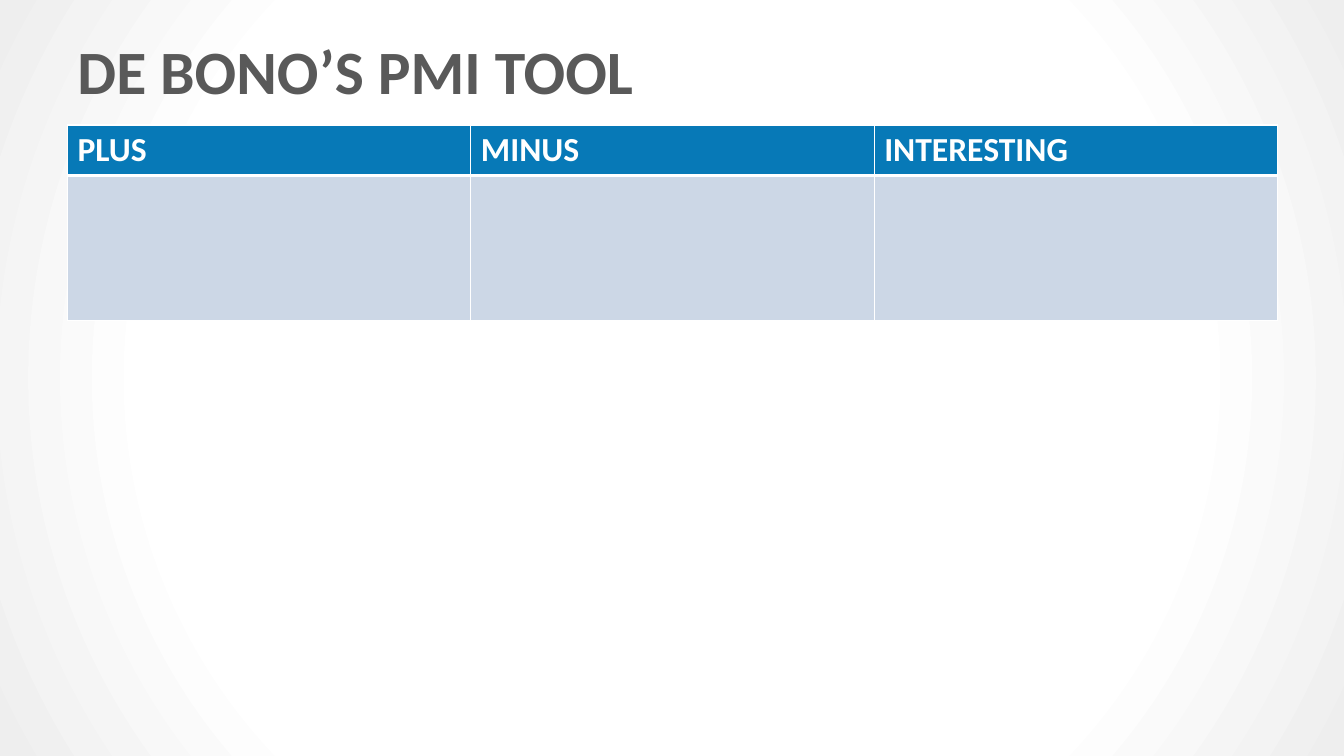
from lxml import etree
from pptx import Presentation
from pptx.dml.color import RGBColor
from pptx.enum import text
from pptx.oxml import ns
from pptx.util import Inches, Pt

WHITE = RGBColor(0xFF, 0xFF, 0xFF)
EDGE = RGBColor(0xEE, 0xEE, 0xEE)
GREY = RGBColor(0x59, 0x59, 0x59)
BLUE = RGBColor(0x07, 0x79, 0xB7)
PALE = RGBColor(0xCC, 0xD7, 0xE6)

HEADS = ["PLUS", "MINUS", "INTERESTING"]
ROWS = [0.49, 1.44]


def write(frame, words, size, color, bold=True, font="Calibri"):
    run = frame.paragraphs[0].add_run()
    run.text = words
    run.font.name = font
    run.font.size = Pt(size)
    run.font.bold = bold
    run.font.color.rgb = color


def backdrop(slide):
    # Radial glow: white centre, light grey corners
    fill = slide.background.fill
    fill.gradient()
    for stop, (place, color) in zip(fill.gradient_stops, [(0.67, WHITE), (1, EDGE)]):
        stop.position = place
        stop.color.rgb = color
    grad = slide.element.find(".//" + ns.qn("a:gradFill"))
    grad.remove(grad.find(ns.qn("a:lin")))
    ring = etree.SubElement(grad, ns.qn("a:path"), path="circle")
    etree.SubElement(ring, ns.qn("a:fillToRect"), l="50000", t="50000", r="50000", b="50000")


def title(slide, left, top, width, height):
    box = slide.shapes.add_textbox(Inches(left), Inches(top), Inches(width), Inches(height))
    frame = box.text_frame
    frame.word_wrap = True
    frame.vertical_anchor = text.MSO_ANCHOR.MIDDLE
    write(frame, "DE BONO’S PMI TOOL", 44, GREY)


def border(cell, **widths):
    # Border lines come before the fill in the cell properties
    props = cell._tc.get_or_add_tcPr()
    for spot, (side, width) in enumerate(widths.items()):
        line = etree.Element(ns.qn("a:ln" + side), w=str(Pt(width)))
        solid = etree.SubElement(line, ns.qn("a:solidFill"))
        etree.SubElement(solid, ns.qn("a:srgbClr"), val=str(WHITE))
        props.insert(spot, line)


def grid(slide, left, top, width):
    frame = slide.shapes.add_table(len(ROWS), len(HEADS), Inches(left), Inches(top),
                                   Inches(width), Inches(sum(ROWS)))
    table = frame.table
    for row, height in zip(table.rows, ROWS):
        row.height = Inches(height)
    for col, head in enumerate(HEADS):
        table.columns[col].width = Inches(width / len(HEADS))
        write(table.cell(0, col).text_frame, head, 24, WHITE)
        for row, color in enumerate([BLUE, PALE]):
            cell = table.cell(row, col)
            cell.fill.solid()
            cell.fill.fore_color.rgb = color
            # A thick rule parts the header from the body
            border(cell, L=1, R=1, T=3 if row else 1, B=1 if row else 3)


def main():
    deck = Presentation()
    deck.slide_width, deck.slide_height = Inches(13.33), Inches(7.5)
    slide = deck.slides.add_slide(deck.slide_layouts[6])
    backdrop(slide)
    title(slide, 0.67, 0.3, 12, 0.78)
    grid(slide, 0.67, 1.24, 12)
    deck.save("out.pptx")


if __name__ == "__main__":
    main()
